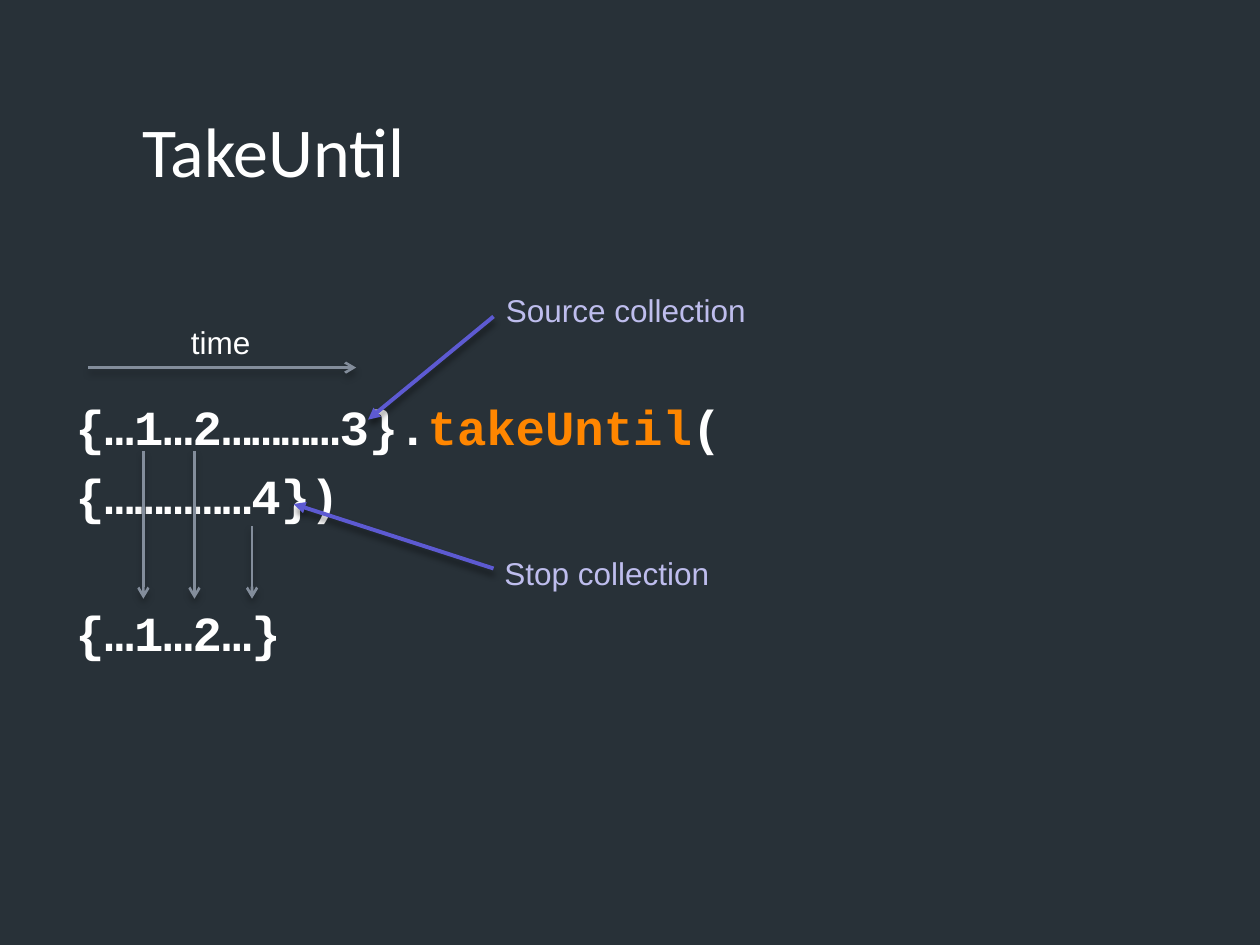
"""Build the TakeUntil slide: two timed collections and their result."""
from lxml import etree
from pptx import Presentation
from pptx.dml.color import RGBColor
from pptx.enum.shapes import MSO_CONNECTOR
from pptx.enum.text import MSO_ANCHOR
from pptx.oxml.ns import qn
from pptx.util import Cm, Pt

STRAIGHT = MSO_CONNECTOR.STRAIGHT
TOP = MSO_ANCHOR.TOP
BOTTOM = MSO_ANCHOR.BOTTOM
WHITE, ORANGE, LILAC = "FFFFFF", "FF8600", "BEBDED"
GREY, VIOLET, NIGHT = "838D9B", "5D5AD2", "283138"


def color(value):
    return RGBColor.from_string(value)


def add_text(slide, box, lines, font, size, anchor=TOP, wrap=True, bold=None):
    frame = slide.shapes.add_textbox(*map(Cm, box)).text_frame
    frame.word_wrap = wrap
    frame.vertical_anchor = anchor
    for index, (gap, pieces) in enumerate(lines):
        line = frame.add_paragraph() if index else frame.paragraphs[0]
        line.space_before = Pt(gap)
        line.font.name, line.font.size, line.font.bold = font, Pt(size), bold
        for words, shade in pieces:
            piece = line.add_run()
            piece.text = words
            piece.font.color.rgb = color(shade)
    return frame


presentation = Presentation()
presentation.slide_width, presentation.slide_height = Cm(25.4), Cm(19.05)
slide = presentation.slides.add_slide(presentation.slide_layouts[6])
slide.background.fill.solid()
slide.background.fill.fore_color.rgb = color(NIGHT)

add_text(slide, (2.62, 0.79, 20.32, 3.2), [(0, [("TakeUntil", WHITE)])],
         "Calibri", 40, BOTTOM)

code_lines = [
    (0, [("{…1…2…………3}.", WHITE), ("takeUntil", ORANGE), ("(", WHITE)]),
    (5.9, [("{……………4})", WHITE)]),
    (44.4, [("{…1…2…}", WHITE)]),
]
code = add_text(slide, (1.27, 4.45, 25.83, 12.57), code_lines,
                "Courier New", 28, bold=True)
code.margin_top = Cm(3.55)

for words, shade, left, top, width in [
    ("time", WHITE, 3.6, 6.38, 1.73),
    ("Source collection", LILAC, 9.95, 5.74, 5.38),
    ("Stop collection", LILAC, 9.92, 11.05, 4.68),
]:
    add_text(slide, (left, top, width, 1.02), [(0, [(words, shade)])],
             "Arial", 18, wrap=False)

value_drops = [(2.89, 9.09, 2.89, 12.07), (3.92, 9.09, 3.92, 12.07),
               (5.08, 10.6, 5.08, 12.07)]
time_axis = (1.78, 7.41, 7.18, 7.41)
collection_pointers = [(9.95, 6.38, 7.42, 8.46), (9.95, 11.46, 5.92, 10.16)]

for routes, shade, weight, head, blur, opacity in [
    (value_drops + [time_axis], GREY, 1.5, "arrow", 4, 28),
    (collection_pointers, VIOLET, 2.25, "triangle", 3.8, 48),
]:
    for route in routes:
        arrow = slide.shapes.add_connector(STRAIGHT, *map(Cm, route))
        arrow.line.color.rgb = color(shade)
        arrow.line.width = Pt(weight)
        properties = arrow.element.spPr
        etree.SubElement(properties.find(qn("a:ln")), qn("a:tailEnd"), type=head)
        effects = etree.SubElement(properties, qn("a:effectLst"))
        shadow = etree.SubElement(
            effects, qn("a:outerShdw"), blurRad=str(Pt(blur)), dist=str(Pt(3)),
            dir="5400000", rotWithShape="0")
        shadow_color = etree.SubElement(shadow, qn("a:srgbClr"), val="000000")
        etree.SubElement(shadow_color, qn("a:alpha"), val=str(opacity * 1000))

presentation.save("out.pptx")
